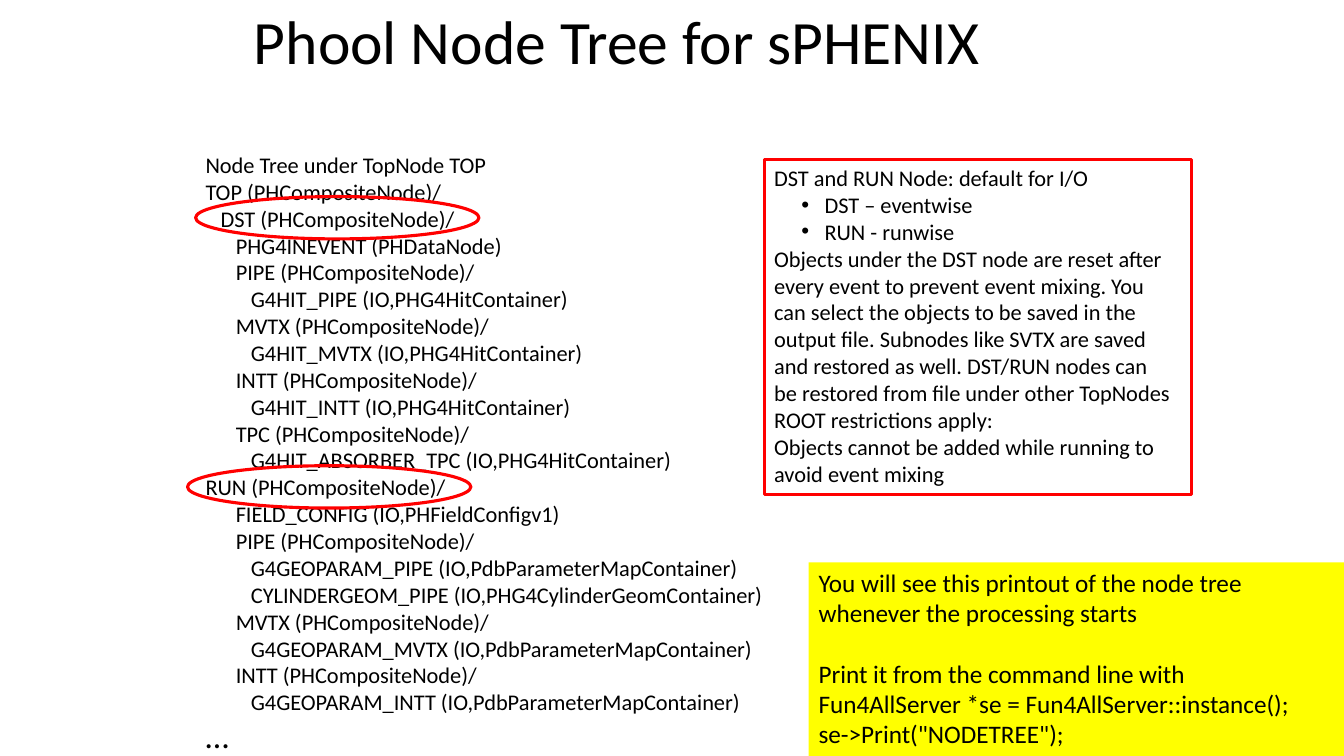
import pptx
import pptx.util
import pptx.dml.color
import pptx.enum.shapes
import pptx.enum.text
import pptx.oxml.ns
from lxml import etree

Inches = pptx.util.Inches
Pt = pptx.util.Pt
RGBColor = pptx.dml.color.RGBColor
Kind = pptx.enum.shapes.MSO_SHAPE
Anchor = pptx.enum.text.MSO_ANCHOR

BLACK = RGBColor(0, 0, 0)
WHITE = RGBColor(255, 255, 255)
RED = RGBColor(255, 0, 0)
YELLOW = RGBColor(255, 255, 0)

TREE = [
    (0, "Node Tree under TopNode TOP"),
    (0, "TOP (PHCompositeNode)/"),
    (1, "DST (PHCompositeNode)/"),
    (2, "PHG4INEVENT (PHDataNode)"),
    (2, "PIPE (PHCompositeNode)/"),
    (3, "G4HIT_PIPE (IO,PHG4HitContainer)"),
    (2, "MVTX (PHCompositeNode)/"),
    (3, "G4HIT_MVTX (IO,PHG4HitContainer)"),
    (2, "INTT (PHCompositeNode)/"),
    (3, "G4HIT_INTT (IO,PHG4HitContainer)"),
    (2, "TPC (PHCompositeNode)/"),
    (3, "G4HIT_ABSORBER_TPC (IO,PHG4HitContainer)"),
    (0, "RUN (PHCompositeNode)/"),
    (2, "FIELD_CONFIG (IO,PHFieldConfigv1)"),
    (2, "PIPE (PHCompositeNode)/"),
    (3, "G4GEOPARAM_PIPE (IO,PdbParameterMapContainer)"),
    (3, "CYLINDERGEOM_PIPE (IO,PHG4CylinderGeomContainer)"),
    (2, "MVTX (PHCompositeNode)/"),
    (3, "G4GEOPARAM_MVTX (IO,PdbParameterMapContainer)"),
    (2, "INTT (PHCompositeNode)/"),
    (3, "G4GEOPARAM_INTT (IO,PdbParameterMapContainer)"),
    (0, "…"),
]
RULES = [
    "DST and RUN Node: default for I/O",
    "DST – eventwise",
    "RUN - runwise",
    "Objects under the DST node are reset after",
    "every event to prevent event mixing. You",
    "can select the objects to be saved in the",
    "output file. Subnodes like SVTX are saved",
    "and restored as well. DST/RUN nodes can",
    "be restored from file under other TopNodes",
    "ROOT restrictions apply:",
    "Objects cannot be added while running to",
    "avoid event mixing",
]
HINTS = [
    "You will see this printout of the node tree whenever the processing starts",
    "Print it from the command line with",
    "Fun4AllServer *se = Fun4AllServer::instance();",
    'se->Print("NODETREE");',
]


class Deck:
    def __init__(self):
        self.show = pptx.Presentation()
        self.show.slide_width = Inches(13.33)
        self.show.slide_height = Inches(7.5)
        self.slide = self.show.slides.add_slide(self.show.slide_layouts[6])
        self.style = {"name": "Calibri", "bold": False}

    def label(self, shape, lines, size, anchor=Anchor.TOP):
        frame = shape.text_frame
        for key, value in {"word_wrap": True, "vertical_anchor": anchor}.items():
            setattr(frame, key, value)
        frame.text = "\n".join(lines)
        for para in frame.paragraphs:
            para.alignment = pptx.enum.text.PP_ALIGN.LEFT
            self.font(para, size)
        return frame.paragraphs

    def font(self, para, size):
        for run in para.runs:
            for key, value in {**self.style, "size": Pt(size)}.items():
                setattr(run.font, key, value)
            run.font.color.rgb = BLACK

    def text(self, spot, lines, size, anchor=Anchor.TOP):
        box = self.slide.shapes.add_textbox(*map(Inches, spot))
        return self.label(box, lines, size, anchor)

    def shape(self, kind, spot, fill=None, line=None):
        item = self.slide.shapes.add_shape(kind, *map(Inches, spot))
        item.shadow.inherit = False
        if fill is None:
            item.fill.background()
        else:
            item.fill.solid()
            item.fill.fore_color.rgb = fill
        if line is None:
            item.line.fill.background()
        else:
            item.line.color.rgb = line
            item.line.width = Pt(2.25)
        return item

    def indent(self, para, left, hang=0, bullet=None):
        props = para._p.get_or_add_pPr()
        props.set("marL", str(Inches(left)))
        props.set("indent", str(Inches(-hang)))
        if bullet:
            font = etree.SubElement(props, pptx.oxml.ns.qn("a:buFont"))
            font.set("typeface", "Arial")
            mark = etree.SubElement(props, pptx.oxml.ns.qn("a:buChar"))
            mark.set("char", bullet)


def main():
    deck = Deck()
    title = deck.text((2.42, -0.18, 8.5, 1.25), ["Phool Node Tree for sPHENIX"], 44, Anchor.MIDDLE)
    title[0].line_spacing = 0.9

    nodes = deck.text((1.94, 1.45, 5.8, 6.16), [name for _, name in TREE], 16)
    for para, (depth, _) in zip(nodes, TREE):
        deck.indent(para, 0.15 * depth)
    deck.font(nodes[-1], 24)

    for left, top in [(1.94, 1.95), (1.86, 4.62)]:
        deck.shape(Kind.OVAL, (left, top, 2.81, 0.42), line=RED)

    panel = deck.shape(Kind.RECTANGLE, (7.58, 1.58, 4.24, 3.33), WHITE, RED)
    for para in deck.label(panel, RULES, 16)[1:3]:
        para.level = 1
        deck.indent(para, 0.5, 0.23, "•")

    note = deck.shape(Kind.RECTANGLE, (8.02, 5.58, 5.31, 1.92), YELLOW)
    deck.label(note, HINTS, 18)[1].space_before = Pt(21.6)

    deck.show.save("out.pptx")


if __name__ == "__main__":
    main()
